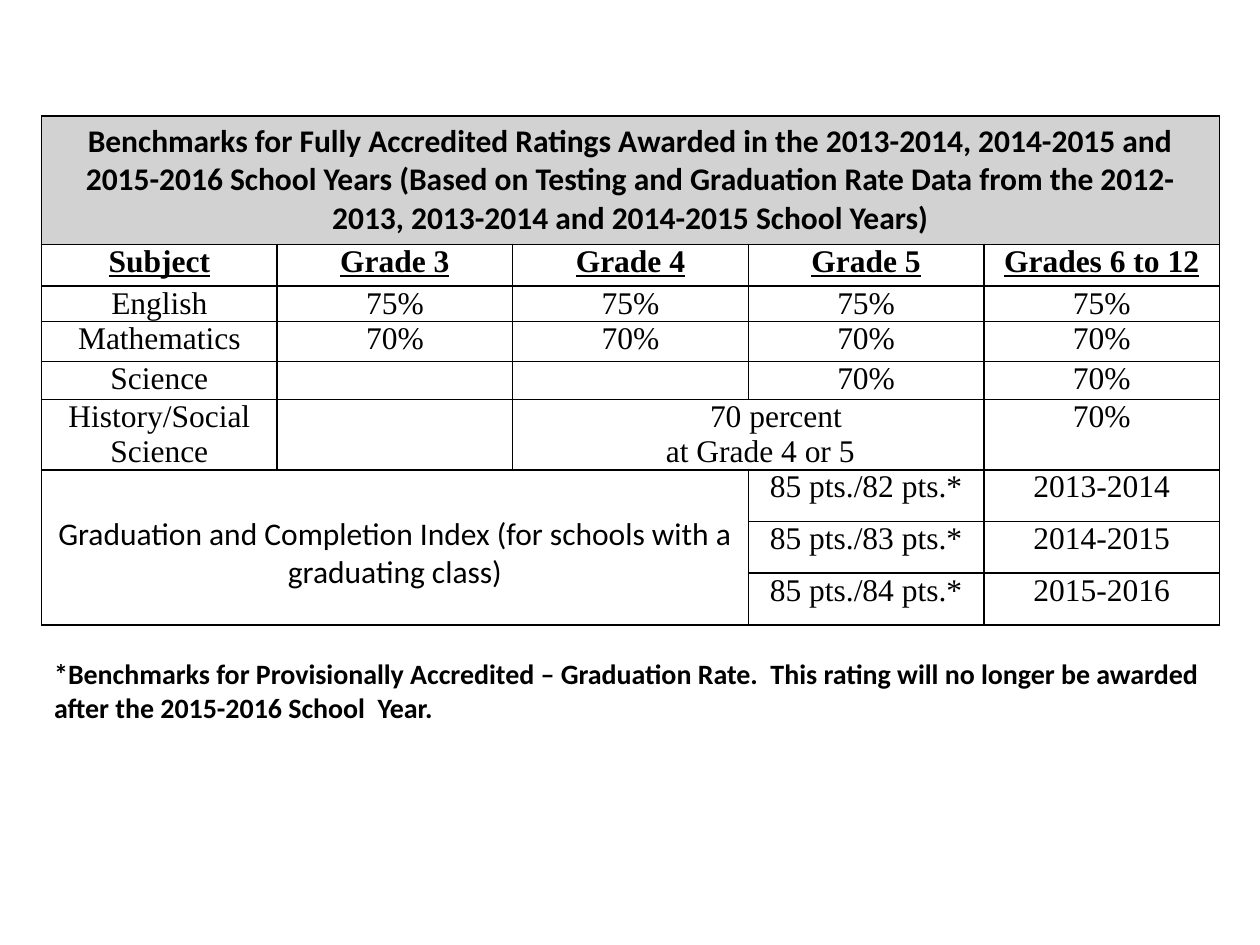
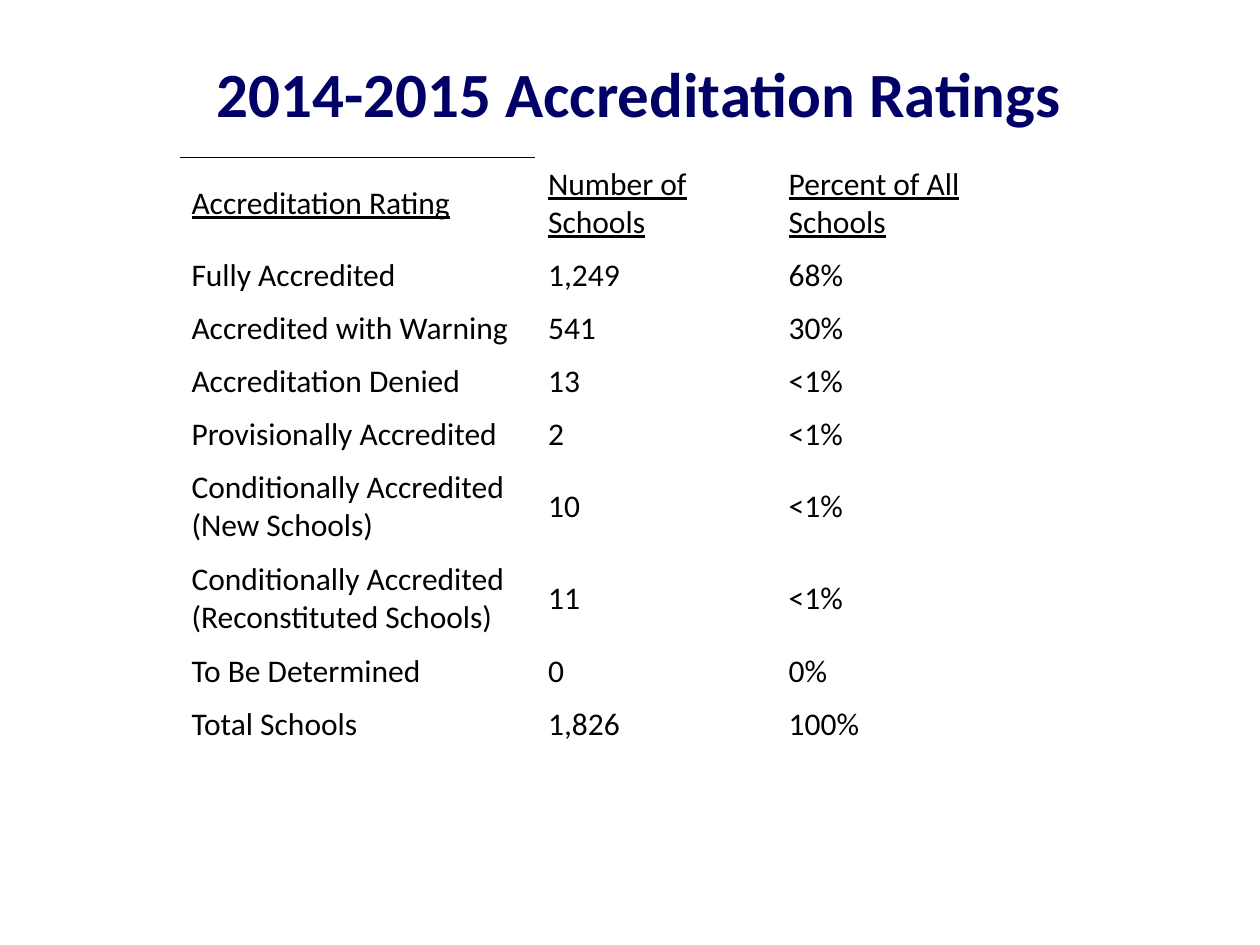
from pptx import Presentation
from pptx.dml.color import RGBColor
from pptx.enum.text import MSO_ANCHOR as ANCHOR, PP_ALIGN as ALIGN
from pptx.oxml import parse_xml
from pptx.oxml.ns import nsdecls
from pptx.util import Inches, Pt

BLACK = RGBColor(0x00, 0x00, 0x00)
WHITE = RGBColor(0xFF, 0xFF, 0xFF)
GREY = RGBColor(0xD2, 0xD2, 0xD2)
NAVY = RGBColor(0x00, 0x00, 0x66)
SANS, SERIF = "Calibri", "Times New Roman"

BENCHMARK_HEADING = (
    "Benchmarks for Fully Accredited Ratings Awarded in the 2013-2014, "
    "2014-2015 and 2015-2016 School Years (Based on Testing and Graduation "
    "Rate Data from the 2012-2013, 2013-2014 and 2014-2015 School Years)")
GRADUATION_LABEL = ("Graduation and Completion Index "
                    "(for schools with a graduating class)")
BENCHMARKS = [
    [BENCHMARK_HEADING, "", "", "", ""],
    ["Subject", "Grade 3", "Grade 4", "Grade 5", "Grades 6 to 12"],
    ["English", "75%", "75%", "75%", "75%"],
    ["Mathematics", "70%", "70%", "70%", "70%"],
    ["Science", "", "", "70%", "70%"],
    ["History/Social Science", "", "70 percent\nat Grade 4 or 5", "", "70%"],
    [GRADUATION_LABEL, "", "", "85 pts./82 pts.*", "2013-2014"],
    ["", "", "", "85 pts./83 pts.*", "2014-2015"],
    ["", "", "", "85 pts./84 pts.*", "2015-2016"],
]
BENCHMARK_COLS = [1.87] * 5
BENCHMARK_ROWS = [1.02, 0.33, 0.28, 0.32, 0.3, 0.56] + [0.41] * 3
MERGES = [((0, 0), (0, 4)), ((5, 2), (5, 3)), ((6, 0), (8, 2))]
HISTORY_INDENTS = [0.44, 0.19]

FOOTNOTE = ("*Benchmarks for Provisionally Accredited – Graduation Rate.  This "
            "rating will no longer be awarded after the 2015-2016 School  Year.")

RATINGS_TITLE = "2014-2015 Accreditation Ratings "
RATINGS = [
    ["Accreditation Rating", "Number of Schools", "Percent of All Schools"],
    ["Fully Accredited", "1,249", "68%"],
    ["Accredited with Warning", "541", "30%"],
    ["Accreditation Denied", "13", "<1%"],
    ["Provisionally Accredited", "2", "<1%"],
    ["Conditionally Accredited (New Schools)", "10", "<1%"],
    ["Conditionally Accredited (Reconstituted Schools)", "11", "<1%"],
    ["To Be Determined", "0", "0%"],
    ["Total Schools", "1,826", "100%"],
]
RATING_COLS = [2.83, 1.91, 1.84]
RATING_ROWS = [0.73] + [0.42] * 4 + [0.73] * 2 + [0.42] * 2


def add_plain_table(slide, left, top, cols, rows):
    """Add a table with no banding or header style."""
    frame = slide.shapes.add_table(len(rows), len(cols), Inches(left), Inches(top),
                                   Inches(sum(cols)), Inches(sum(rows)))
    table = frame.table
    table.first_row = table.horz_banding = False
    for col, width in zip(table.columns, cols):
        col.width = Inches(width)
    for row, height in zip(table.rows, rows):
        row.height = Inches(height)
    return table


def style_font(font, name, size, color=BLACK, bold=False, underline=False):
    font.name, font.size, font.color.rgb = name, Pt(size), color
    font.bold, font.underline = bold, underline


def write_cell(cell, text, name, size=18, align=ALIGN.LEFT, fill=None, **style):
    cell.text = text
    for p in cell.text_frame.paragraphs:
        p.alignment = align
        style_font(p.font, name, size, **style)
    if fill is None:
        cell.fill.background()
    else:
        cell.fill.solid()
        cell.fill.fore_color.rgb = fill


def add_borders(cell, sides, width=1):
    """Draw black lines on the given sides (letters from L, R, T, B, in that order)."""
    props = cell._tc.get_or_add_tcPr()
    for i, side in enumerate(sides):
        props.insert(i, parse_xml(
            f'<a:ln{side} {nsdecls("a")} w="{Pt(width)}"><a:solidFill>'
            f'<a:srgbClr val="{BLACK}"/></a:solidFill></a:ln{side}>'))


def build_benchmarks(prs):
    slide = prs.slides.add_slide(prs.slide_layouts[6])
    table = add_plain_table(slide, 0.33, 0.92, BENCHMARK_COLS, BENCHMARK_ROWS)
    for r, row in enumerate(BENCHMARKS):
        for c, text in enumerate(row):
            cell = table.cell(r, c)
            sans = text in (BENCHMARK_HEADING, GRADUATION_LABEL)
            write_cell(cell, text, SANS if sans else SERIF, align=ALIGN.CENTER,
                       fill=WHITE if r else GREY, bold=r < 2, underline=r == 1)
            if not sans:
                cell.margin_left = cell.margin_right = Inches(0.07)
                cell.margin_top = cell.margin_bottom = 0
            add_borders(cell, "LRTB")
    for first, last in MERGES:
        table.cell(*first).merge(table.cell(*last))
    table.cell(6, 0).margin_top = Inches(0.36)
    for p, indent in zip(table.cell(5, 2).text_frame.paragraphs, HISTORY_INDENTS):
        p._p.get_or_add_pPr().set("marL", str(Inches(indent)))

    note = add_plain_table(slide, 0.33, 5.17, [sum(BENCHMARK_COLS)], [0.63])
    write_cell(note.cell(0, 0), FOOTNOTE, SANS, 16, fill=WHITE, bold=True)


def build_ratings(prs):
    slide = prs.slides.add_slide(prs.slide_layouts[5])
    title = slide.shapes.title
    title.left, title.top = Inches(0.42), Inches(0.3)
    title.width, title.height = Inches(9.42), Inches(0.87)
    tf = title.text_frame
    tf.text, tf.vertical_anchor = RATINGS_TITLE, ANCHOR.MIDDLE
    p = tf.paragraphs[0]
    p.alignment = ALIGN.CENTER
    style_font(p.font, SANS, 36, NAVY, bold=True)

    table = add_plain_table(slide, 1.42, 1.25, RATING_COLS, RATING_ROWS)
    for r, row in enumerate(RATINGS):
        for c, text in enumerate(row):
            cell = table.cell(r, c)
            write_cell(cell, text, SANS, underline=r == 0)
            cell.vertical_anchor = ANCHOR.MIDDLE
    add_borders(table.cell(0, 0), "T", 0.75)


def main():
    prs = Presentation()
    prs.slide_width, prs.slide_height = Inches(10), Inches(7.5)
    build_benchmarks(prs)
    build_ratings(prs)
    prs.save("out.pptx")


if __name__ == "__main__":
    main()
